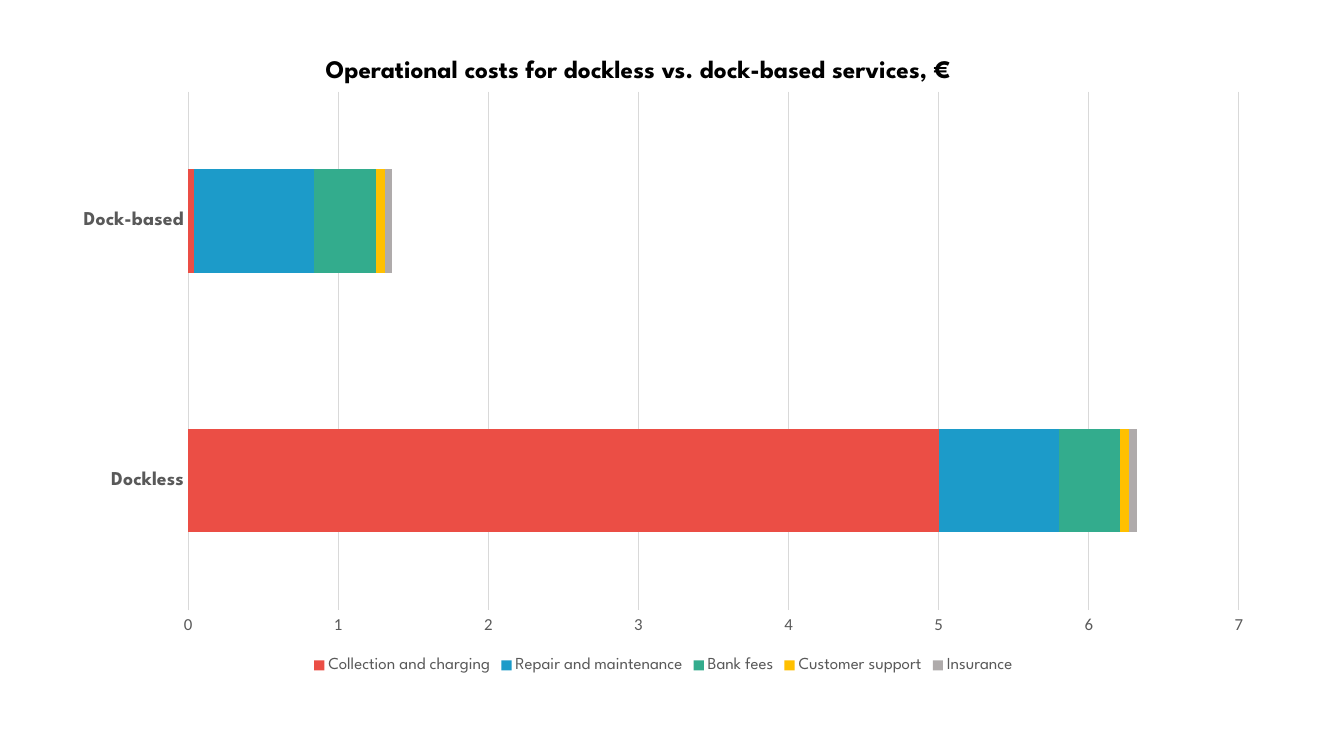
from pptx import Presentation
from pptx import util as u
from pptx.chart import data
from pptx.dml.color import RGBColor
from pptx.enum import chart as ch, text

BLACK = RGBColor(0x00, 0x00, 0x00)
GREY = RGBColor(0x59, 0x59, 0x59)
LIGHT_GREY = RGBColor(0xD9, 0xD9, 0xD9)
RED = RGBColor(0xEB, 0x4E, 0x45)
BLUE = RGBColor(0x1C, 0x9B, 0xC9)
GREEN = RGBColor(0x33, 0xAC, 0x8D)
YELLOW = RGBColor(0xFF, 0xC0, 0x00)
SILVER = RGBColor(0xAF, 0xAB, 0xAB)
HEADING_FONT = "League Spartan"
BODY_FONT = "Calibri"

SERVICES = ["Dockless", "Dock-based"]
COSTS = [
    ("Collection and charging", (5, 0.04), RED),
    ("Repair and maintenance", (0.8, 0.8), BLUE),
    ("Bank fees", (0.41, 0.41), GREEN),
    ("Customer support", (0.06, 0.06), YELLOW),
    ("Insurance", (0.05, 0.05), SILVER),
]


def format_font(font, size, name=HEADING_FONT, color=GREY, bold=False):
    font.size = u.Pt(size)
    font.name = name
    font.color.rgb = color
    font.bold = bold


def write(frame, words, line_spacing=1.0, space_after=0, **font_format):
    """Put one left-aligned paragraph of formatted words in a text frame."""
    frame.word_wrap = True
    frame.auto_size = text.MSO_AUTO_SIZE.NONE
    frame.vertical_anchor = text.MSO_ANCHOR.TOP
    paragraph = frame.paragraphs[0]
    paragraph.alignment = text.PP_ALIGN.LEFT
    paragraph.line_spacing = line_spacing
    paragraph.space_after = u.Pt(space_after)
    run = paragraph.add_run()
    run.text = words
    format_font(run.font, **font_format)


deck = Presentation()
deck.slide_width, deck.slide_height = u.Inches(13.33), u.Inches(7.5)
slide = deck.slides.add_slide(deck.slide_layouts[5])

# Cost breakdown
cost_data = data.CategoryChartData()
cost_data.categories = SERVICES
for name, values, _ in COSTS:
    cost_data.add_series(name, values)

costs = slide.shapes.add_chart(
    ch.XL_CHART_TYPE.BAR_STACKED,
    u.Inches(0.59), u.Inches(0.79), u.Inches(11.98), u.Inches(5.93),
    cost_data).chart
costs.has_title = False
format_font(costs.font, 10, name=BODY_FONT, color=BLACK)

bars = costs.plots[0]
bars.gap_width = 150
bars.overlap = 100
bars.vary_by_categories = False
for series, (_, _, color) in zip(bars.series, COSTS):
    series.format.fill.solid()
    series.format.fill.fore_color.rgb = color

# Axes and legend
services, euros = costs.category_axis, costs.value_axis
for axis in (services, euros):
    axis.major_tick_mark = axis.minor_tick_mark = ch.XL_TICK_MARK.NONE
format_font(services.tick_labels.font, 14, bold=True)
format_font(euros.tick_labels.font, 12, name=BODY_FONT)
euros.minimum_scale, euros.maximum_scale, euros.major_unit = 0, 7, 1
euros.tick_labels.number_format = "0"
euros.tick_labels.number_format_is_linked = False
euros.format.line.fill.background()
euros.has_major_gridlines = True
for line in (services.format.line, euros.major_gridlines.format.line):
    line.color.rgb = LIGHT_GREY
    line.width = u.Pt(0.75)

costs.has_legend = True
costs.legend.position = ch.XL_LEGEND_POSITION.BOTTOM
costs.legend.include_in_layout = False
format_font(costs.legend.font, 12)

# Heading
heading = slide.shapes.title
heading.left, heading.top = u.Inches(3.13), u.Inches(0.46)
heading.width, heading.height = u.Inches(8.97), u.Inches(0.33)
write(heading.text_frame,
      "Operational costs for dockless vs. dock-based services, €",
      line_spacing=1.07, space_after=8, size=18, color=BLACK, bold=True)

deck.save("out.pptx")
